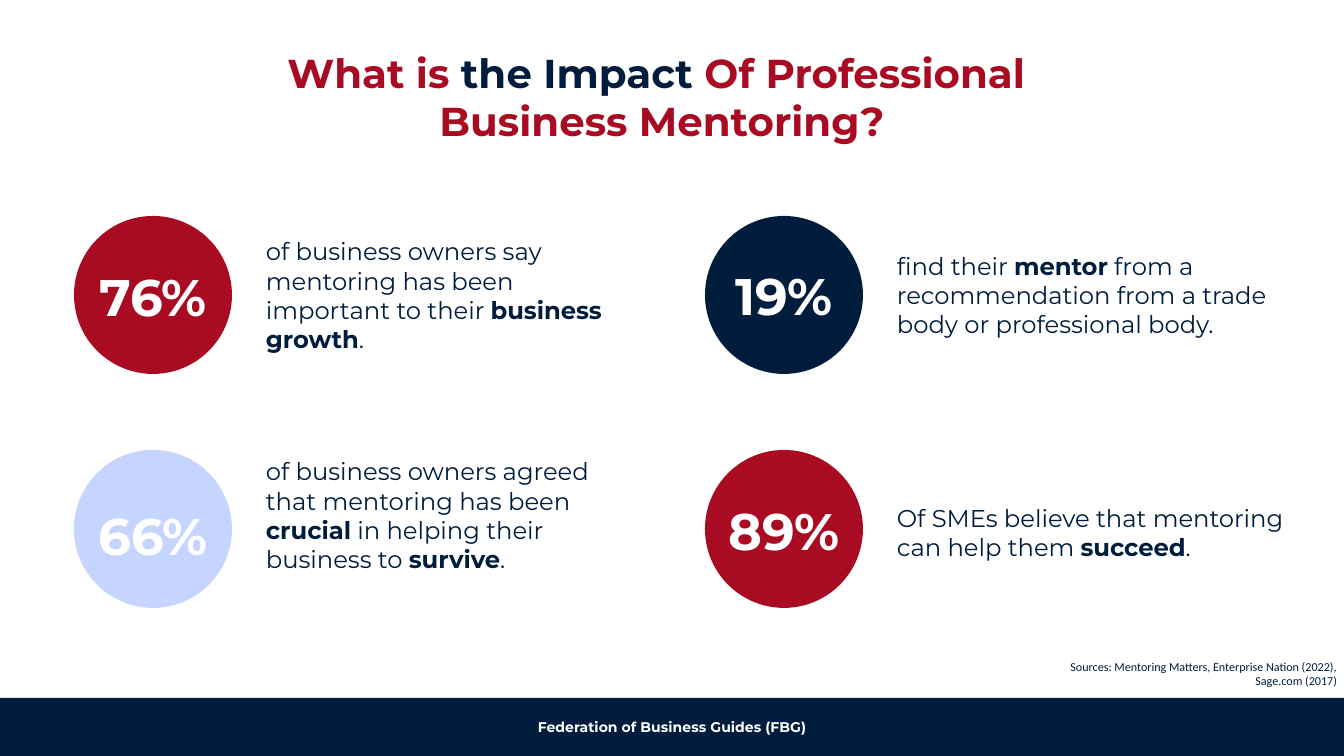
"""Build the slide on the impact of professional business mentoring."""
from pptx import Presentation
from pptx.dml.color import RGBColor
from pptx.enum.shapes import MSO_SHAPE
from pptx.enum.text import MSO_ANCHOR, PP_ALIGN
from pptx.util import Emu, Pt

LEFT, CENTER, RIGHT = PP_ALIGN.LEFT, PP_ALIGN.CENTER, PP_ALIGN.RIGHT
TOP, MIDDLE, BOTTOM = MSO_ANCHOR.TOP, MSO_ANCHOR.MIDDLE, MSO_ANCHOR.BOTTOM
RECT, OVAL = MSO_SHAPE.RECTANGLE, MSO_SHAPE.OVAL

COLORS = {"red": "A90B22", "navy": "001D3D", "pale": "C6D5FF", "white": "FFFFFF"}
TITLE = [
    ("What is ", "red", True),
    ("the Impact", "navy", True),
    (" Of Professional \vBusiness Mentoring?", "red", True),
]
STATS = [
    {"value": "76%", "fill": "red", "value_dy": 42, "text_dy": 0, "text_w": 374,
     "text": [("of business owners say mentoring has been important to their ", "navy", False),
              ("business growth", "navy", True), (".", "navy", False)]},
    {"value": "19%", "fill": "navy", "value_dy": 41, "text_dy": 0, "text_w": 374,
     "text": [("find their ", "navy", False), ("mentor", "navy", True),
              (" from a recommendation from a trade body or professional body.", "navy", False)]},
    {"value": "66%", "fill": "pale", "value_dy": 47, "text_dy": -14, "text_w": 374,
     "text": [("of business owners agreed that mentoring has been ", "navy", False),
              ("crucial", "navy", True), (" in helping their business to ", "navy", False),
              ("survive", "navy", True), (".", "navy", False)]},
    {"value": "89%", "fill": "red", "value_dy": 42, "text_dy": 3, "text_w": 392,
     "text": [("Of SMEs believe that mentoring can help them ", "navy", False),
              ("succeed", "navy", True), (".", "navy", False)]},
]
SOURCES = [("Sources: Mentoring Matters, Enterprise Nation (2022), Sage.com (2017)", "navy", False)]
FOOTER = [("Federation of Business Guides (FBG)", "white", True)]

SLIDE_W, SLIDE_H = 1344, 756
FOOTER_Y = 698
GRID_X, GRID_Y, COL_STEP, ROW_STEP = 74, 216, 631, 234
CIRCLE, TEXT_DX = 158, 192
VALUE_W, VALUE_H = 144, 65


def px(n):
    return Emu(round(n * 914400 / 134.4))


def color(name):
    return RGBColor.from_string(COLORS[name])


def add_shape(slide, kind, box, fill):
    sp = slide.shapes.add_shape(kind, *map(px, box))
    sp.shadow.inherit = False
    sp.fill.solid()
    sp.fill.fore_color.rgb = color(fill)
    sp.line.fill.background()


def add_text(slide, box, runs, size, font="Montserrat", align=LEFT, anchor=TOP, inset=7):
    tf = slide.shapes.add_textbox(*map(px, box)).text_frame
    tf.word_wrap = True
    tf.vertical_anchor = anchor
    tf.margin_left = tf.margin_right = tf.margin_top = tf.margin_bottom = px(inset)
    p = tf.paragraphs[0]
    p.alignment = align
    for text, ink, bold in runs:
        for i, part in enumerate(text.split("\v")):
            if i:
                p.add_line_break()
            r = p.add_run()
            r.text = part
            r.font.name = font
            r.font.size = Pt(size)
            r.font.bold = bold
            r.font.color.rgb = color(ink)


def add_stat(slide, index, stat):
    row, col = divmod(index, 2)
    x, y = GRID_X + col * COL_STEP, GRID_Y + row * ROW_STEP
    add_shape(slide, OVAL, (x, y, CIRCLE, CIRCLE), stat["fill"])
    add_text(slide, (x + TEXT_DX, y + stat["text_dy"], stat["text_w"], CIRCLE),
             stat["text"], 13, anchor=MIDDLE, inset=0)
    add_text(slide, (x + (CIRCLE - VALUE_W) / 2, y + stat["value_dy"], VALUE_W, VALUE_H),
             [(stat["value"], "white", True)], 27.5, align=CENTER)


def main():
    prs = Presentation()
    prs.slide_width, prs.slide_height = px(SLIDE_W), px(SLIDE_H)
    s = prs.slides.add_slide(prs.slide_layouts[6])
    footer = (0, FOOTER_Y, SLIDE_W, SLIDE_H - FOOTER_Y)
    add_shape(s, RECT, footer, "navy")
    add_text(s, footer, FOOTER, 7.5, align=CENTER, anchor=MIDDLE)
    add_text(s, (130, 66, 1064, 82), TITLE, 21.6, align=CENTER, anchor=BOTTOM, inset=3)
    for i, stat in enumerate(STATS):
        add_stat(s, i, stat)
    add_text(s, (1054, 652, 290, 39), SOURCES, 6.5, font="Calibri", align=RIGHT)
    prs.save("out.pptx")


if __name__ == "__main__":
    main()
